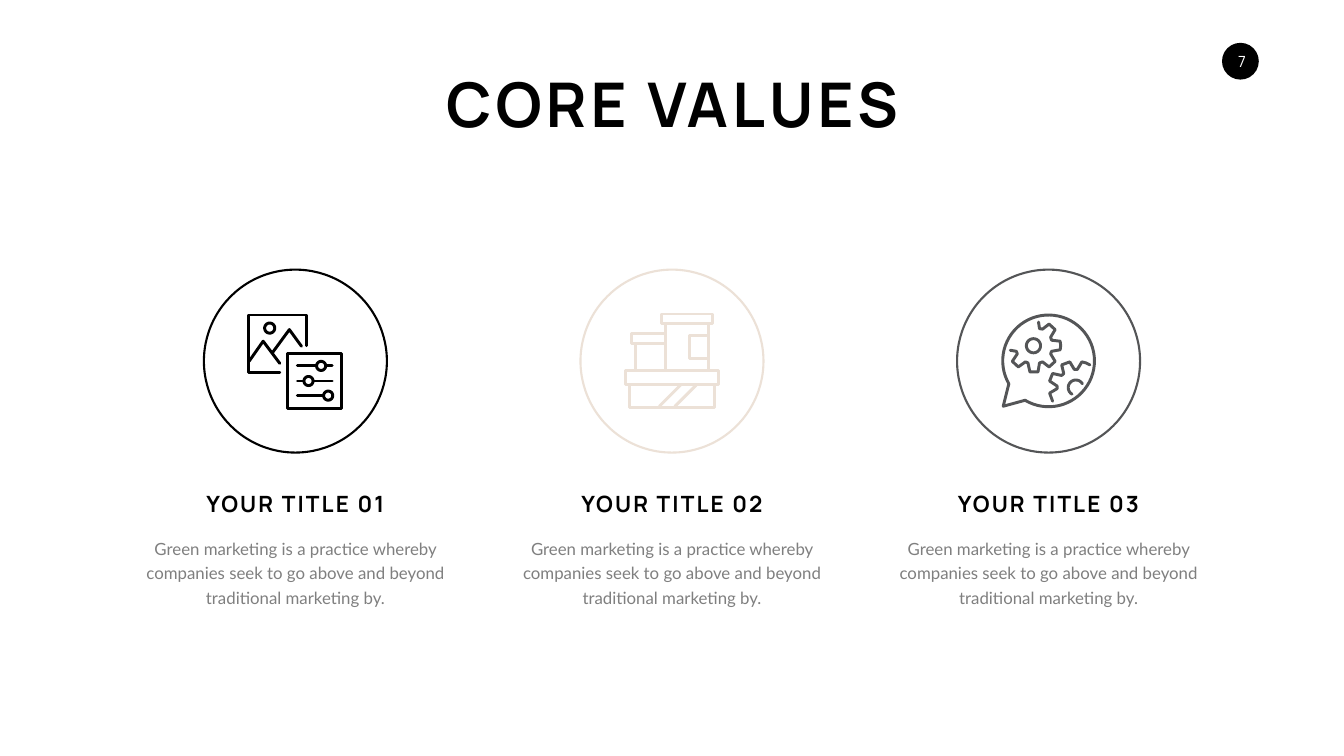
from dataclasses import dataclass
from math import cos, radians, sin

from lxml import etree
from pptx import Presentation
from pptx import util as u
from pptx.dml import color
from pptx.enum import shapes, text
from pptx.oxml import ns


@dataclass(frozen=True)
class Theme:
    black: str = "000000"
    white: str = "FFFFFF"
    sand: str = "ECE1D7"
    slate: str = "545557"
    grey: str = "7F7F7F"
    head: str = "Manrope"
    body: str = "Lato"
    title: int = 88
    name: int = 32
    note: int = 24
    page: int = 22
    ring: float = 3
    icon: float = 4.2


theme = Theme()


def write(shape, words, size, font=theme.head, ink=theme.black, bold=False,
          track=0, wrap=False, anchor=text.MSO_ANCHOR.TOP, lead=None, before=0):
    """Fill a shape with one centred paragraph; track, lead and before are points."""
    frame = shape.text_frame
    frame.word_wrap = wrap
    frame.auto_size = text.MSO_AUTO_SIZE.SHAPE_TO_FIT_TEXT
    frame.vertical_anchor = anchor
    para = frame.paragraphs[0]
    para.alignment = text.PP_ALIGN.CENTER
    para.space_before = u.Pt(before)
    if lead:
        para.line_spacing = u.Pt(lead)
    run = para.add_run()
    run.text = words
    run.font.name, run.font.size, run.font.bold = font, u.Pt(size), bold
    run.font.color.rgb = color.RGBColor.from_string(ink)
    if track:
        run._r.get_or_add_rPr().set("spc", str(track * 100))


def arc(x, y, radius, start=0, stop=360):
    """Points along an arc; degrees run clockwise from the right."""
    turns = [radians(start + (stop - start) * i / 60) for i in range(61)]
    return [(x + radius * cos(a), y + radius * sin(a)) for a in turns]


deck = Presentation()
deck.slide_width, deck.slide_height = u.Inches(26.66), u.Inches(15)
slide = deck.slides.add_slide(deck.slide_layouts[5])
items = slide.shapes

# Title and page number
title = items.title
title.left, title.top = u.Inches(8.6), u.Inches(1.25)
title.width, title.height = u.Inches(9.47), u.Inches(1.58)
write(title, "CORE VALUES", theme.title, bold=True, track=6)

badge = items.add_shape(shapes.MSO_SHAPE.OVAL, u.Inches(24.24), u.Inches(0.85),
                        u.Inches(0.73), u.Inches(0.73))
badge.shadow.inherit = False
badge.fill.solid()
badge.fill.fore_color.rgb = color.RGBColor.from_string(theme.black)
badge.line.fill.background()
write(badge, "7", theme.page, ink=theme.white, anchor=text.MSO_ANCHOR.MIDDLE)
badge.text_frame.margin_left = u.Inches(0.11)
badge.text_frame.margin_right = u.Inches(0.05)

# Icon strokes: photo with sliders
photo = [
    [(6.08, 6.86), (6.08, 6.25), (4.93, 6.25), (4.93, 7.4), (5.55, 7.4)],
    [(4.94, 7.17), (5.22, 6.77), (5.55, 7.21)],
    [(5.41, 6.99), (5.74, 6.54), (5.98, 6.87)],
    [(5.7, 7.02), (6.78, 7.02), (6.78, 8.1), (5.7, 8.1), (5.7, 7.02)],
    arc(5.35, 6.51, 0.1),
]
knob = 0.09
for x, y in [(6.37, 7.26), (6.12, 7.56), (6.51, 7.85)]:
    photo += [arc(x, y, knob), [(5.9, y), (x - knob, y)]]
    if x + knob < 6.59:
        photo.append([(x + knob, y), (6.59, y)])

# Icon strokes: stacked boxes, each as left, top, right, bottom
boxes = [
    (12.48, 7.62, 14.18, 8.08), (12.4, 7.35, 14.25, 7.62),
    (12.6, 6.81, 13.21, 7.35), (12.52, 6.62, 13.21, 6.81),
    (13.21, 6.42, 14.06, 7.35), (13.13, 6.23, 14.14, 6.42),
    (13.68, 6.66, 14.06, 7.12),
]
stack = [[(l, t), (r, t), (r, b), (l, b), (l, t)] for l, t, r, b in boxes]
stack += [[(x, 8.06), (x + 0.42, 7.64)] for x in (13.08, 13.39)]

# Icon strokes: speech bubble with two gears
bubble = [
    arc(20.8, 7.16, 0.91, 121, -210) + [(19.9, 8.06), (20.34, 7.94)],
    arc(20.5, 6.86, 0.14),
    [(20.6, 6.39), (20.62, 6.52), (20.68, 6.53), (20.81, 6.43), (20.93, 6.54),
     (20.84, 6.69), (20.86, 6.75), (21.03, 6.77), (21.04, 6.86), (21.03, 6.94),
     (20.86, 6.97), (20.84, 7.02), (20.93, 7.17), (20.81, 7.28), (20.68, 7.18),
     (20.62, 7.2), (20.59, 7.38), (20.43, 7.38), (20.39, 7.2), (20.34, 7.18),
     (20.2, 7.28), (20.08, 7.17), (20.18, 7.02), (20.16, 6.97), (20.04, 6.95)],
    arc(21.34, 7.69, 0.15, -30, -240),
    [(21.62, 7.24), (21.54, 7.2), (21.46, 7.18), (21.37, 7.33), (21.31, 7.33),
     (21.22, 7.18), (21.06, 7.24), (21.1, 7.41), (21.06, 7.45), (20.88, 7.41),
     (20.82, 7.56), (20.97, 7.66), (20.97, 7.71), (20.82, 7.8), (20.88, 7.96)],
]

# Three equal columns
first, pitch = 5.86, 7.47
ring, wide, note = 3.63, 3.88, 6.3
columns = [(photo, theme.black), (stack, theme.sand), (bubble, theme.slate)]
for i, (strokes, ink) in enumerate(columns):
    mid = first + i * pitch
    tint = color.RGBColor.from_string(ink)

    disc = items.add_shape(shapes.MSO_SHAPE.OVAL, u.Inches(mid - ring / 2),
                           u.Inches(5.35), u.Inches(ring), u.Inches(ring))
    disc.fill.solid()
    disc.fill.fore_color.rgb = color.RGBColor.from_string(theme.white)

    paths = [[(u.Inches(x), u.Inches(y)) for x, y in stroke] for stroke in strokes]
    pen = items.build_freeform(*paths[0][0])
    for path in paths:
        pen.move_to(*path[0])
        pen.add_line_segments(path[1:], close=False)
    icon = pen.convert_to_shape()
    icon.fill.background()

    for shape, weight in [(disc, theme.ring), (icon, theme.icon)]:
        shape.shadow.inherit = False
        shape.line.color.rgb = tint
        shape.line.width = u.Pt(weight)
    edge = icon.line._get_or_add_ln()
    edge.set("cap", "rnd")
    etree.SubElement(edge, ns.qn("a:round"))

    name = items.add_textbox(u.Inches(mid - wide / 2), u.Inches(9.68),
                             u.Inches(wide), u.Inches(0.64))
    write(name, f"YOUR TITLE {i + 1:02}", theme.name, bold=True, track=3,
          anchor=text.MSO_ANCHOR.MIDDLE)

    about = items.add_textbox(u.Inches(mid - note / 2), u.Inches(10.55),
                              u.Inches(note), u.Inches(1.52))
    write(about, "Green marketing is a practice whereby companies seek to go "
          "above and beyond traditional marketing by.", theme.note,
          font=theme.body, ink=theme.grey, wrap=True, lead=35, before=4.8)

deck.save("out.pptx")
